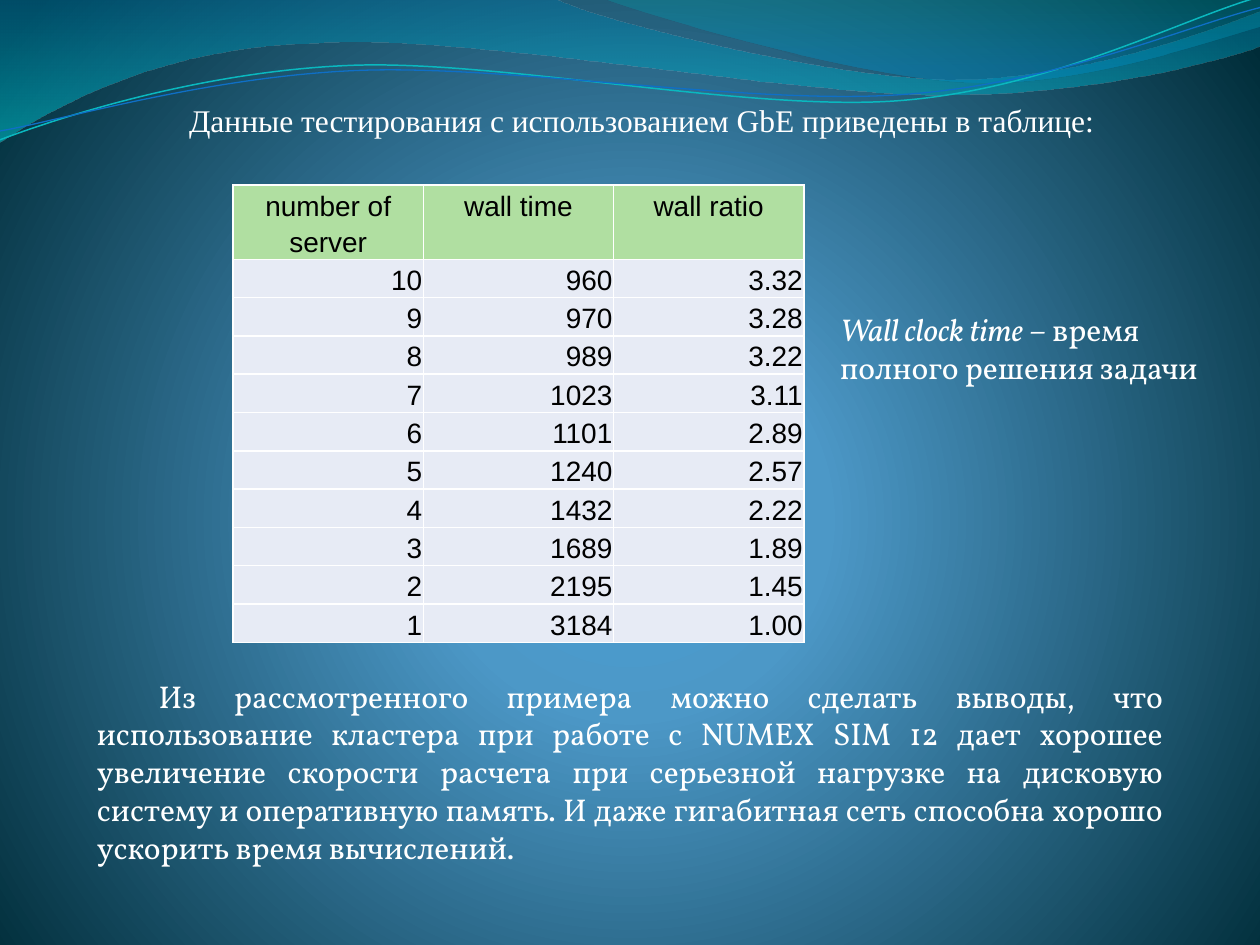
import pptx
import pptx.dml.color
import pptx.enum.text
import pptx.oxml
import pptx.oxml.ns
import pptx.util
from pptx.util import Inches

ALIGN = pptx.enum.text.PP_ALIGN
NS = pptx.oxml.ns.nsdecls("a")
WHITE = "FFFFFF"


def rgb(color):
    return pptx.dml.color.RGBColor.from_string(color)


def set_gradient(fill, parent, stops, direction):
    """Fill with (position, colour, opacity) stops, all in percent."""
    fill.gradient()
    old = parent.find(pptx.oxml.ns.qn("a:gradFill"))
    stops_xml = "".join(
        f'<a:gs pos="{pos * 1000}"><a:srgbClr val="{color}">'
        f'<a:alpha val="{opacity * 1000}"/></a:srgbClr></a:gs>'
        for pos, color, opacity in stops)
    parent.replace(old, pptx.oxml.parse_xml(
        f'<a:gradFill {NS} rotWithShape="1"><a:gsLst>{stops_xml}</a:gsLst>'
        f'{direction}</a:gradFill>'))


prs = pptx.Presentation()
prs.slide_width, prs.slide_height = Inches(10), Inches(7.5)
slide = prs.slides.add_slide(prs.slide_layouts[5])

# Background glow
background_fill = slide.background.fill
background_fill.solid()
set_gradient(
    background_fill, slide._element.find(".//" + pptx.oxml.ns.qn("p:bgPr")),
    [(0, "4AA0D6", 100), (25, "4C98C7", 100), (100, "002C38", 100)],
    '<a:path path="circle"><a:fillToRect l="10000" t="110000" r="10000" b="100000"/></a:path>')

# Waves: a start point, then straight (2 numbers) or Bezier (6 numbers) pieces
DOWN = '<a:lin ang="5400000" scaled="1"/>'
waves = [
    ([(0, 0), (4.4, -0.01), (4.76, 0.17, 6.64, 0.63, 7.58, 0.63),
      (8.53, 0.63, 9.58, 0.26, 10, 0.09), (10.01, 0.36),
      (9.83, 0.44, 8.7, 0.76, 7.46, 0.75), (6.22, 0.75, 3.82, 0.28, 2.57, 0.34),
      (1.29, 0.36, 0.46, 0.83, -0.01, 1.13)],
     [(0, "0074A1", 45), (100, "00C6CF", 55)], None),
    ([(4.79, -0.01), (5.09, 0.11, 6.82, 0.62, 7.69, 0.65),
      (8.56, 0.69, 9.61, 0.32, 10, 0.21), (10, 0)],
     [(0, "00A1A9", 30), (80, "008BBF", 45)], None),
    ([(0, 1.11), (0.48, 0.93, 1.58, 0.57, 2.77, 0.52),
      (3.95, 0.47, 5.93, 0.89, 7.13, 0.8), (8.33, 0.71, 9.38, 0.15, 9.98, -0.02)],
     None, ("0AB8BF", 0.85)),
    ([(0, 1.04), (0.47, 0.96, 1.64, 0.61, 2.83, 0.56),
      (4.03, 0.51, 5.97, 0.84, 7.17, 0.75), (8.36, 0.67, 9.41, 0.21, 10, 0.06)],
     None, ("0F6FC6", 0.75)),
]
for pieces, stops, stroke in waves:
    ends = [(Inches(piece[-2]), Inches(piece[-1])) for piece in pieces]
    builder = slide.shapes.build_freeform(*ends[0], scale=1.0)
    builder.add_line_segments(ends[1:], close=stops is not None)
    wave = builder.convert_to_shape()
    # Bend the straight segments that have control points
    segments = list(wave._element.iter(pptx.oxml.ns.qn("a:lnTo")))
    for segment, piece in zip(segments, pieces[1:]):
        if len(piece) == 6:
            curve_points = "".join(
                f'<a:pt x="{Inches(x) - wave.left}" y="{Inches(y) - wave.top}"/>'
                for x, y in zip(piece[::2], piece[1::2]))
            segment.getparent().replace(segment, pptx.oxml.parse_xml(
                f'<a:cubicBezTo {NS}>{curve_points}</a:cubicBezTo>'))
    wave.shadow.inherit = False
    if stops:
        set_gradient(wave.fill, wave._element.spPr, stops, DOWN)
        wave.line.fill.background()
    else:
        wave.fill.background()
        wave.line.color.rgb = rgb(stroke[0])
        wave.line.width = pptx.util.Pt(stroke[1])

# Test results table
results = [
    ("number of server", "wall time", "wall ratio"),
    ("10", "960", "3.32"),
    ("9", "970", "3.28"),
    ("8", "989", "3.22"),
    ("7", "1023", "3.11"),
    ("6", "1101", "2.89"),
    ("5", "1240", "2.57"),
    ("4", "1432", "2.22"),
    ("3", "1689", "1.89"),
    ("2", "2195", "1.45"),
    ("1", "3184", "1.00"),
]
table = slide.shapes.add_table(len(results), 3, Inches(1.85), Inches(1.47),
                               Inches(4.53), Inches(3.35)).table
for column in table.columns:
    column.width = Inches(1.51)
for i, values in enumerate(results):
    header = i == 0
    table.rows[i].height = Inches(0.55 if header else 0.28)
    for j, value in enumerate(values):
        cell = table.cell(i, j)
        cell.text = value
        cell.margin_left = cell.margin_right = Inches(0.01)
        cell.margin_top = cell.margin_bottom = Inches(0.01)
        cell.fill.solid()
        cell.fill.fore_color.rgb = rgb("B0DFA1" if header else "E7EBF5")
        paragraph = cell.text_frame.paragraphs[0]
        paragraph.alignment = ALIGN.CENTER if header else ALIGN.RIGHT
        paragraph.line_spacing = 1.15
        # Row height follows the run and end-mark sizes
        font = paragraph.runs[0].font
        font.name = "Arial"
        font.size = pptx.util.Pt(16)
        font.bold = False
        font.color.rgb = rgb("000000")
        paragraph._p.append(pptx.oxml.parse_xml(
            f'<a:endParaRPr {NS} sz="1600"><a:latin typeface="Arial"/></a:endParaRPr>'))
        for k, side in enumerate(("lnL", "lnR", "lnT", "lnB")):
            cell._tc.get_or_add_tcPr().insert(k, pptx.oxml.parse_xml(
                f'<a:{side} {NS} w="12700"><a:solidFill><a:srgbClr val="{WHITE}"/>'
                f'</a:solidFill></a:{side}>'))

# Title, note on the term, and conclusion, in front of the waves
title = slide.shapes.title
slide.shapes._spTree.append(title._element)
note = slide.shapes.add_textbox(0, 0, 0, 0)
conclusion = slide.shapes.add_textbox(0, 0, 0, 0)
texts = [
    (title, (0.91, 0.75, 8.19, 0.4), "Times New Roman", True,
     ["Данные тестирования с использованием GbE приведены в таблице:"]),
    (note, (6.57, 2.41, 3.23, 0.71), "Vollkorn", False,
     ["Wall clock time ", "– время полного решения задачи"]),
    (conclusion, (0.67, 5.32, 8.66, 1.62), "Vollkorn", True,
     ["Из рассмотренного примера можно сделать выводы, что использование кластера "
      "при работе с NUMEX SIM 12 дает хорошее увеличение скорости расчета при "
      "серьезной нагрузке на дисковую систему и оперативную память. И даже "
      "гигабитная сеть способна хорошо ускорить время вычислений."]),
]
for box, place, font_name, indented, runs in texts:
    box.left, box.top, box.width, box.height = map(Inches, place)
    frame = box.text_frame
    frame.word_wrap = True
    frame.auto_size = pptx.enum.text.MSO_AUTO_SIZE.SHAPE_TO_FIT_TEXT
    paragraph = frame.paragraphs[0]
    for text in runs:
        paragraph.add_run().text = text
    paragraph.font.name = font_name
    paragraph.font.size = pptx.util.Pt(18)
    paragraph.font.color.rgb = rgb(WHITE)
    paragraph.alignment = ALIGN.JUSTIFY if indented else ALIGN.LEFT
    if indented:
        properties = paragraph._p.get_or_add_pPr()
        properties.set("marL", "0")
        properties.set("indent", str(Inches(0.49)))
title.text_frame.vertical_anchor = pptx.enum.text.MSO_ANCHOR.MIDDLE
note.text_frame.paragraphs[0].runs[0].font.italic = True

prs.save("out.pptx")
